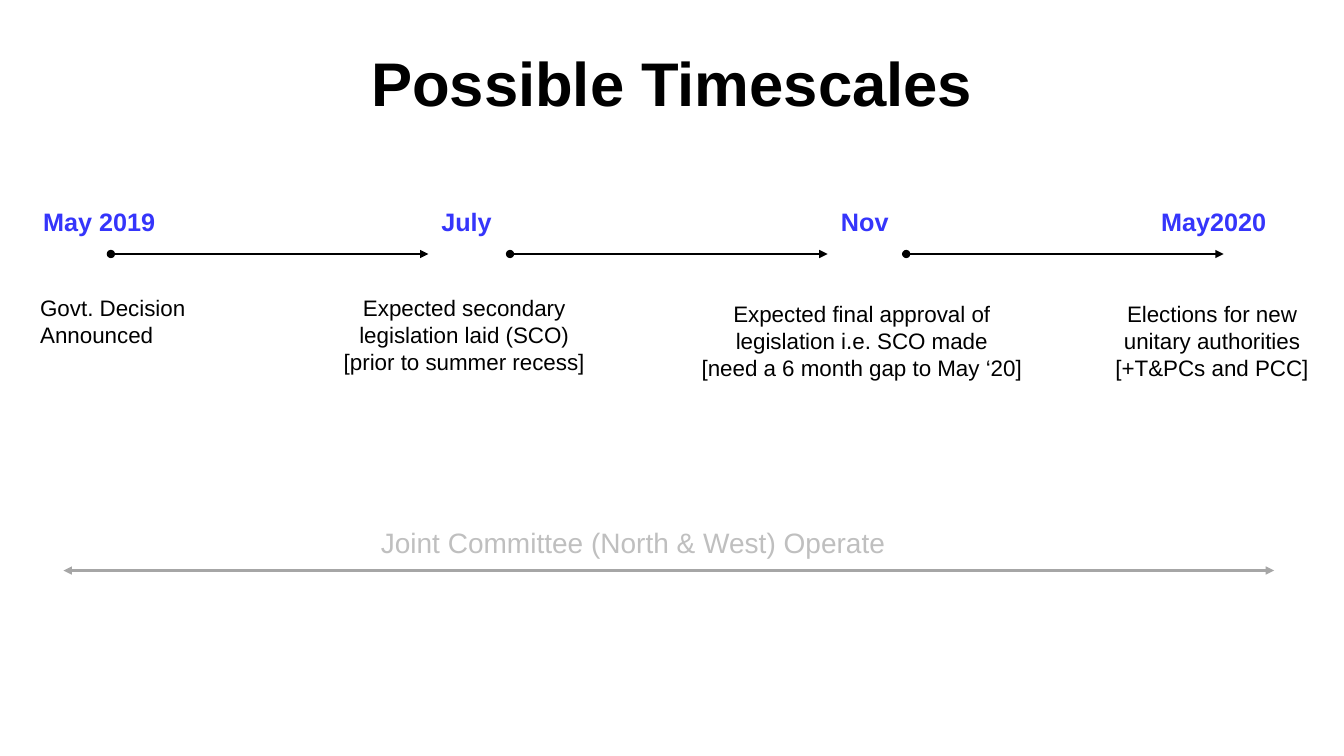
"""Build the Possible Timescales slide: a dated timeline above a committee span."""
from dataclasses import dataclass

from lxml import etree
from pptx import Presentation, util as u
from pptx.dml import color
from pptx.enum import shapes, text
from pptx.oxml import ns

BLACK = "000000"
BLUE = "3535FB"
LEFT = text.PP_ALIGN.LEFT
CENTER = text.PP_ALIGN.CENTER


@dataclass
class Label:
    left: float
    top: float
    width: float
    height: float
    lines: tuple[str, ...]
    size: float = 16
    colour: str = BLACK
    bold: bool = False
    align: text.PP_ALIGN = CENTER
    tabs: tuple[float, ...] = ()


@dataclass
class Arrow:
    start: float
    end: float
    top: float
    weight: float = 1.5
    colour: str = BLACK
    head: str = "oval"


TITLE = Label(66.24, 15.12, 828, 74.16, ("Possible Timescales",), 44, bold=True)

LABELS = [
    Label(23.76, 144, 909.36, 28.8, ("May 2019\tJuly\tNov\tMay2020",), 18, BLUE, True, LEFT,
          (284.4, 569.9, 798.6)),
    Label(21.6, 206.64, 120.96, 46.08, ("Govt. Decision Announced",), align=LEFT),
    Label(237.6, 206.64, 187.92, 65.52,
          ("Expected secondary legislation laid (SCO)", "[prior to summer recess]")),
    Label(490.32, 210.96, 250.56, 65.52,
          ("Expected final approval of legislation i.e. SCO made",
           "[need a 6 month gap to May ‘20]")),
    Label(789.12, 210.96, 153.36, 65.52,
          ("Elections for new unitary authorities [+T&PCs and PCC]",)),
    Label(264.96, 371.52, 396.72, 31.68,
          ("Joint Committee (North & West) Operate",), 20, "BFBFBF", align=LEFT),
]

STEP_LENGTH = 226.8
STEPS = [(79.2, 1), (364.32, 1.5), (647.28, 1.5)]
ARROWS = [Arrow(start, start + STEP_LENGTH, 181.44, weight) for start, weight in STEPS]
ARROWS.append(Arrow(45.36, 910.08, 407.52, 1.5, "A6A6A6", "triangle"))


def rgb(value: str) -> color.RGBColor:
    """Turn a hex string into a colour."""
    return color.RGBColor.from_string(value)


def apply(target: object, values: dict) -> None:
    """Set every attribute named in values."""
    for name, value in values.items():
        setattr(target, name, value)


def write_label(shape, label: Label, anchor: text.MSO_ANCHOR, spacing: float = 1) -> None:
    """Place a text shape and fill it with formatted paragraphs."""
    apply(shape, {name: u.Pt(getattr(label, name)) for name in ("left", "top", "width", "height")})
    frame = shape.text_frame
    frame.text = "\n".join(label.lines)
    apply(frame, {"word_wrap": True, "auto_size": text.MSO_AUTO_SIZE.NONE,
                  "vertical_anchor": anchor})
    for paragraph in frame.paragraphs:
        if label.tabs:
            stops = etree.SubElement(paragraph._p.get_or_add_pPr(), ns.qn("a:tabLst"))
            for position in label.tabs:
                etree.SubElement(stops, ns.qn("a:tab"), pos=str(u.Pt(position)), algn="l")
        apply(paragraph, {"alignment": label.align, "line_spacing": spacing})
        for run in paragraph.runs:
            apply(run.font, {"name": "Arial", "size": u.Pt(label.size), "bold": label.bold})
            run.font.color.rgb = rgb(label.colour)


def draw_arrow(slide, arrow: Arrow) -> None:
    """Draw a horizontal arrow with its end marks."""
    connector = slide.shapes.add_connector(
        shapes.MSO_CONNECTOR.STRAIGHT, u.Pt(arrow.start), u.Pt(arrow.top),
        u.Pt(arrow.end), u.Pt(arrow.top))
    connector.line.width = u.Pt(arrow.weight)
    connector.line.color.rgb = rgb(arrow.colour)
    outline = connector.line._get_or_add_ln()
    for tag, kind in (("a:headEnd", arrow.head), ("a:tailEnd", "triangle")):
        etree.SubElement(outline, ns.qn(tag), type=kind)
    etree.SubElement(connector._element.spPr, ns.qn("a:effectLst"))


def main() -> None:
    """Create the slide and save the presentation."""
    presentation = Presentation()
    apply(presentation, {"slide_width": u.Pt(960), "slide_height": u.Pt(540)})
    slide = presentation.slides.add_slide(presentation.slide_layouts[5])
    write_label(slide.shapes.title, TITLE, text.MSO_ANCHOR.BOTTOM, 0.9)
    for arrow in ARROWS:
        draw_arrow(slide, arrow)
    for label in LABELS:
        box = slide.shapes.add_textbox(0, 0, 0, 0)
        write_label(box, label, text.MSO_ANCHOR.TOP)
    presentation.save("out.pptx")


if __name__ == "__main__":
    main()
